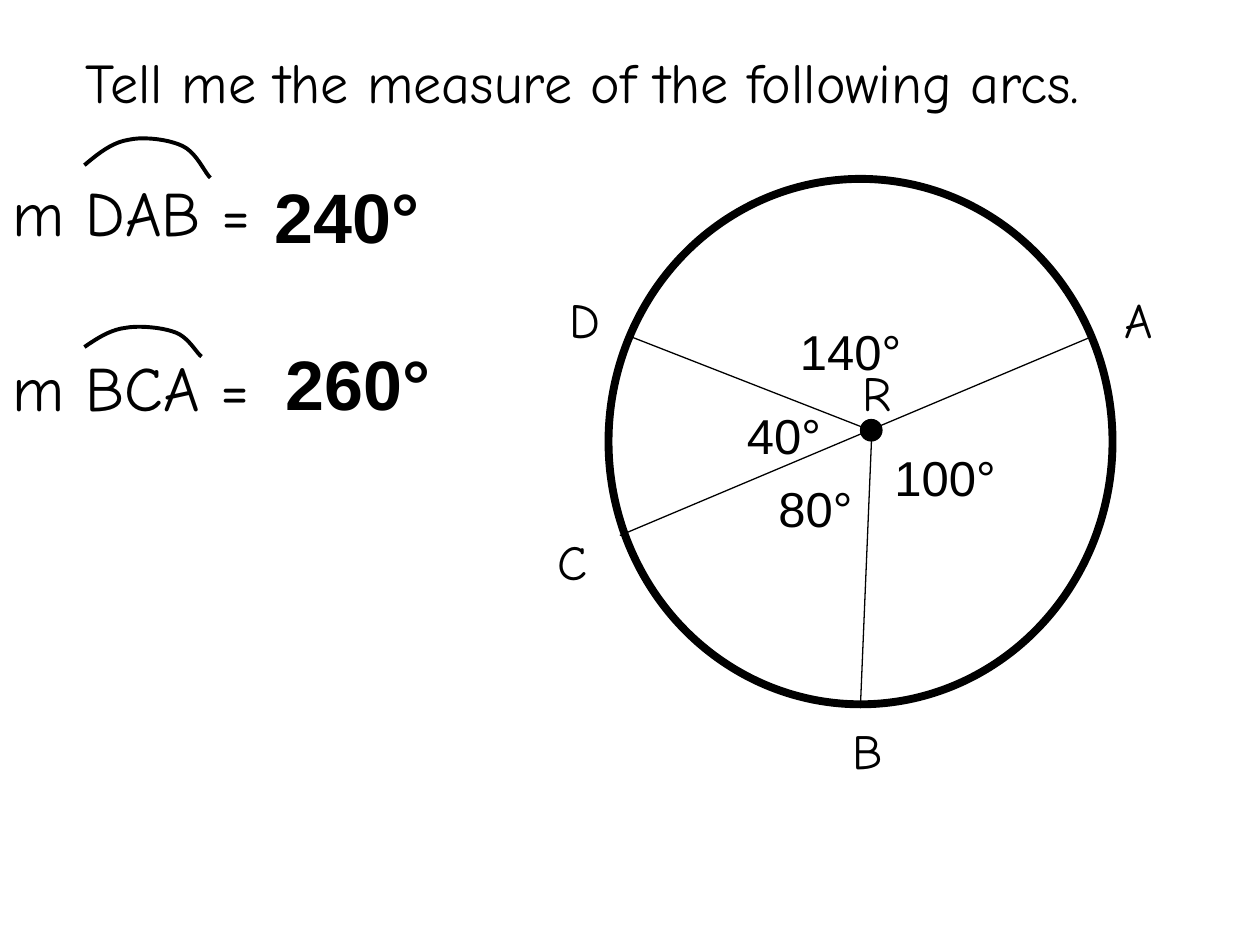
import dataclasses
import pptx
import pptx.dml.color
import pptx.enum.shapes
import pptx.enum.text
import pptx.oxml.ns
import pptx.util
from lxml import etree

Inches = pptx.util.Inches
Pt = pptx.util.Pt


@dataclasses.dataclass(frozen=True)
class Theme:
    ink: pptx.dml.color.RGBColor = pptx.dml.color.RGBColor(0, 0, 0)
    hand: str = "Comic Neue"
    plain: str = "Arial"
    title: int = 32
    label: int = 28
    question: int = 36
    answer: int = 40
    circle_line: float = 4.5
    arc_line: float = 2.25
    radius_line: float = 0.75


@dataclasses.dataclass(frozen=True)
class Box:
    left: float
    top: float
    width: float
    height: float

    def inside(self, left, top, width, height):
        return Box(self.left + left, self.top + top, width, height)

    def lengths(self):
        return [Inches(v) for v in (self.left, self.top, self.width, self.height)]


THEME = Theme()
ARC_START = (0, 0.7)
ARC_CURVES = [
    ((0.11, 0.42), (0.22, 0.15), (0.35, 0.09)),
    ((0.48, 0), (0.68, 0.09), (0.78, 0.24)),
    ((0.89, 0.39), (0.96, 0.91), (1, 1)),
]
CURVE_STEPS = 10


def apply_format(target, values):
    for name, value in values.items():
        setattr(target, name, value)


def write(holder, text, font, size, bold=False):
    frame = holder.text_frame
    apply_format(frame, {
        "word_wrap": True,
        "vertical_anchor": pptx.enum.text.MSO_ANCHOR.TOP,
        "auto_size": pptx.enum.text.MSO_AUTO_SIZE.NONE,
    })
    paragraph = frame.paragraphs[0]
    apply_format(paragraph, {"alignment": pptx.enum.text.PP_ALIGN.LEFT, "line_spacing": 1.0})
    run = paragraph.add_run()
    run.text = text
    apply_format(run.font, {"name": font, "size": Pt(size), "bold": bold})
    run.font.color.rgb = THEME.ink


def add_label(slide, box, text, font, size, bold=False):
    write(slide.shapes.add_textbox(*box.lengths()), text, font, size, bold)


def ink_line(part, width):
    part.line.color.rgb = THEME.ink
    part.line.width = Pt(width)


def add_oval(slide, box, line_width):
    oval = slide.shapes.add_shape(pptx.enum.shapes.MSO_SHAPE.OVAL, *box.lengths())
    oval.shadow.inherit = False
    oval.fill.background()
    ink_line(oval, line_width)
    return oval


def add_radius(slide, box, start, end):
    ends = [Inches(v) for x, y in (start, end) for v in (box.left + x, box.top + y)]
    radius = slide.shapes.add_connector(pptx.enum.shapes.MSO_CONNECTOR.STRAIGHT, *ends)
    ink_line(radius, THEME.radius_line)
    etree.SubElement(radius._element.spPr, pptx.oxml.ns.qn("a:effectLst"))


def curve_points(start, curves):
    for first, second, end in curves:
        for step in range(1, CURVE_STEPS + 1):
            t = step / CURVE_STEPS
            u = 1 - t
            yield tuple(
                u**3 * a + 3 * u * u * t * b + 3 * u * t * t * c + t**3 * d
                for a, b, c, d in zip(start, first, second, end)
            )
        start = end


def add_arc(slide, box):
    def place(point):
        return (Inches(box.left + point[0] * box.width), Inches(box.top + point[1] * box.height))

    builder = slide.shapes.build_freeform(*place(ARC_START))
    builder.add_line_segments([place(p) for p in curve_points(ARC_START, ARC_CURVES)], close=False)
    arc = builder.convert_to_shape()
    arc.shadow.inherit = False
    arc.fill.background()
    ink_line(arc, THEME.arc_line)


def place_title(slide, box):
    title = slide.shapes.title
    apply_format(title, dict(zip(("left", "top", "width", "height"), box.lengths())))
    write(title, "Tell me the measure of the following arcs.", THEME.hand, THEME.title)


def place_circle(slide, box):
    add_oval(slide, box.inside(0.5, 0, 4, 4.17), THEME.circle_line)
    center, a, b, c, d = (2.59, 2), (4.34, 1.25), (2.5, 4.16), (0.59, 2.83), (0.67, 1.25)
    for start, end in ((c, a), (center, b), (center, d)):
        add_radius(slide, box, start, end)
    dot = add_oval(slide, box.inside(2.5, 1.91, 0.17, 0.17), THEME.radius_line)
    dot.fill.solid()
    dot.fill.fore_color.rgb = THEME.ink

    angles = [("80°", 1.75, 2.33, 0.8), ("100°", 2.67, 2.08, 1.33),
              ("40°", 1.5, 1.75, 1.33), ("140°", 1.92, 1.08, 1.33)]
    for text, left, top, width in angles:
        add_label(slide, box.inside(left, top, width, 0.57), text, THEME.plain, THEME.label)
    points = [("A", 4.5, 0.83), ("B", 2.34, 4.25), ("C", 0, 2.75), ("D", 0.09, 0.83), ("R", 2.42, 1.41)]
    for text, left, top in points:
        add_label(slide, box.inside(left, top, 0.67, 0.57), text, THEME.hand, THEME.label)


def place_question(slide, box, name, answer, arc_box, question_top, answer_box):
    add_label(slide, box.inside(0, question_top, 2.42, 0.7), f"m {name} =", THEME.hand, THEME.question)
    add_arc(slide, box.inside(*arc_box))
    add_label(slide, box.inside(*answer_box), answer, THEME.plain, THEME.answer, True)


def main():
    deck = pptx.Presentation()
    deck.slide_width, deck.slide_height = Inches(10), Inches(7.5)
    slide = deck.slides.add_slide(deck.slide_layouts.get_by_name("Title Only"))
    place_title(slide, Box(0.58, 0.33, 9.17, 0.63))
    place_circle(slide, Box(4.33, 1.42, 5.17, 4.82))
    place_question(slide, Box(0, 1.08, 4, 1.02), "DAB", "240°",
                   (0.67, 0, 1, 0.33), 0.25, (2.08, 0.25, 1.92, 0.77))
    place_question(slide, Box(0, 2.58, 4.09, 0.84), "BCA", "260°",
                   (0.67, 0, 0.93, 0.25), 0.14, (2.17, 0.07, 1.92, 0.77))
    deck.save("out.pptx")


if __name__ == "__main__":
    main()
